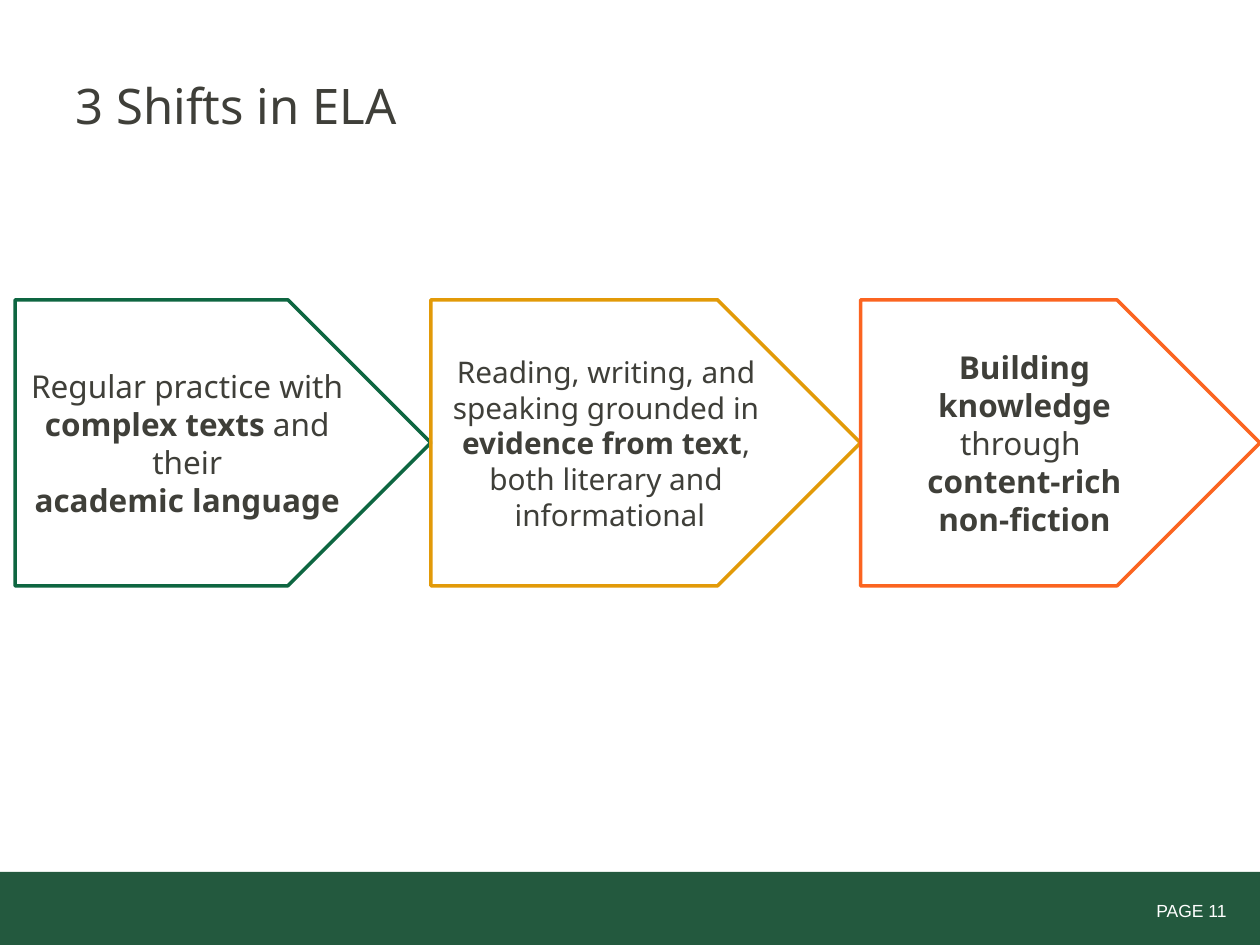
from pptx import Presentation
from pptx.dml.color import RGBColor
from pptx.enum import shapes, text
from pptx.util import Inches, Pt

GREEN = RGBColor(0x0E, 0x66, 0x41)
GOLD = RGBColor(0xE2, 0x9A, 0x08)
ORANGE = RGBColor(0xFB, 0x64, 0x20)
FOOTER_GREEN = RGBColor(0x23, 0x59, 0x3E)
INK = RGBColor(0x3F, 0x3F, 0x39)
WHITE = RGBColor(0xFF, 0xFF, 0xFF)

ARROWS_LEFT = 0.12
SHIFTS = [
    (3.3, GREEN, 18, [
        [("Regular practice with ", False)],
        [("complex texts ", True), ("and their", False)],
        [("academic language", True)],
    ]),
    (3.41, GOLD, 17, [
        [("Reading, writing, and ", False)],
        [("speaking grounded in ", False)],
        [("evidence from text", True), (", ", False)],
        [("both literary and ", False)],
        [("informational", False)],
    ]),
    (3.17, ORANGE, 18, [
        [("Building knowledge", True)],
        [("through ", False)],
        [("content-rich", True)],
        [("non-fiction", True)],
    ]),
]


def style_span(span, size, color, name="Noto Sans", bold=False):
    span.font.name = name
    span.font.size = Pt(size)
    span.font.bold = bold
    span.font.color.rgb = color


def add_footer(page):
    band = page.shapes.add_shape(
        shapes.MSO_SHAPE.RECTANGLE, Inches(0), Inches(6.92), Inches(10.01), Inches(0.59))
    band.shadow.inherit = False
    band.fill.solid()
    band.fill.fore_color.rgb = FOOTER_GREEN
    band.line.fill.background()

    box = page.shapes.add_textbox(Inches(8.28), Inches(7.09), Inches(1.59), Inches(0.27))
    box.text_frame.word_wrap = True
    box.text_frame.text = "PAGE 11 "
    para = box.text_frame.paragraphs[0]
    para.alignment = text.PP_ALIGN.RIGHT
    style_span(para.runs[0], 10, WHITE, "Arial")


def set_title(page, wording):
    title = page.shapes.title
    title.left, title.top = Inches(0.5), Inches(0.21)
    title.width, title.height = Inches(9), Inches(1.25)
    title.text_frame.text = wording
    title.text_frame.vertical_anchor = text.MSO_ANCHOR.MIDDLE
    para = title.text_frame.paragraphs[0]
    para.alignment = text.PP_ALIGN.LEFT
    style_span(para.runs[0], 28, INK)


def add_shift(page, left, width, color, size, lines):
    arrow = page.shapes.add_shape(
        shapes.MSO_SHAPE.PENTAGON, Inches(left), Inches(2.38), Inches(width), Inches(2.27))
    arrow.shadow.inherit = False
    arrow.adjustments[0] = 0.5
    arrow.fill.background()
    arrow.line.color.rgb = color
    arrow.line.width = Pt(2)
    frame = arrow.text_frame
    frame.word_wrap = True
    frame.vertical_anchor = text.MSO_ANCHOR.MIDDLE
    for index, line in enumerate(lines):
        para = frame.add_paragraph() if index else frame.paragraphs[0]
        para.alignment = text.PP_ALIGN.CENTER
        for wording, bold in line:
            span = para.add_run()
            span.text = wording
            style_span(span, size, INK, bold=bold)


def main():
    deck = Presentation()
    deck.slide_width, deck.slide_height = Inches(10), Inches(7.5)
    page = deck.slides.add_slide(deck.slide_layouts[5])
    set_title(page, "3 Shifts in ELA")
    add_footer(page)
    left = ARROWS_LEFT
    for width, color, size, lines in SHIFTS:
        add_shift(page, left, width, color, size, lines)
        left += width
    deck.save("out.pptx")


if __name__ == "__main__":
    main()
